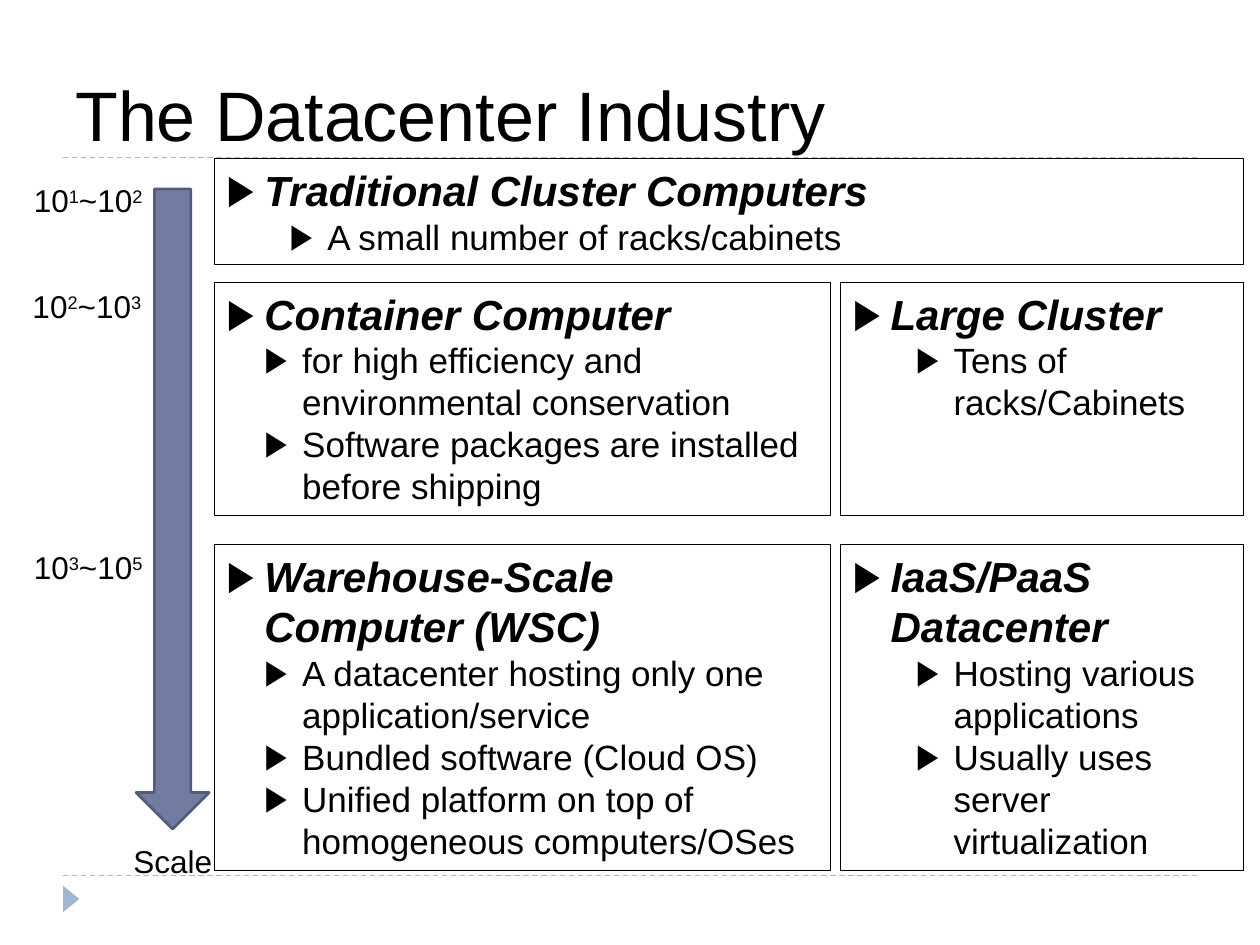
from dataclasses import dataclass

from lxml.etree import SubElement
from pptx import Presentation
from pptx.dml.color import RGBColor
from pptx.enum.dml import MSO_LINE_DASH_STYLE as Dash
from pptx.enum.shapes import MSO_CONNECTOR as Conn, MSO_SHAPE as Shape
from pptx.enum.text import MSO_ANCHOR as Anchor, PP_ALIGN as Align
from pptx.oxml.ns import qn
from pptx.util import Inches, Pt

WIDTH, HEIGHT = 10, 7.5
FONT, BLACK, PALE, SLATE, EDGE = "Arial", "000000", "9FB8CD", "727CA3", "545C79"
ROWS = ((1.26, 0.84), (2.24, 1.85), (4.32, 2.59))
COLS = ((1.7, 4.89), (6.67, 3.2))
HANG = 0.3


@dataclass(frozen=True)
class Panel:
    row: int
    first: int
    last: int
    heading: str
    points: tuple[str, ...]
    indent: float = 0.8


@dataclass(frozen=True)
class Scale:
    left: float
    top: float
    low: str
    high: str


PANELS = (
    Panel(2, 0, 0, "Warehouse-Scale Computer (WSC)",
          ("A datacenter hosting only one application/service",
           "Bundled software (Cloud OS)",
           "Unified platform on top of homogeneous computers/OSes"), 0.6),
    Panel(1, 0, 0, "Container Computer",
          ("for high efficiency and environmental conservation",
           "Software packages are installed before shipping"), 0.6),
    Panel(0, 0, 1, "Traditional Cluster Computers",
          ("A small number of racks/cabinets",)),
    Panel(1, 1, 1, "Large Cluster", ("Tens of racks/Cabinets",)),
    Panel(2, 1, 1, "IaaS/PaaS Datacenter",
          ("Hosting various applications", "Usually uses server virtualization")),
)
SCALES = (Scale(0.17, 1.39, "1", "2"), Scale(0.16, 2.23, "2", "3"),
          Scale(0.17, 4.3, "3", "5"))


def rgb(value: str) -> RGBColor:
    return RGBColor.from_string(value)


def add_text(p, text: str, *, size: float, bold=False, italic=False, raised=False) -> None:
    r = p.add_run()
    r.text = text
    r.font.name, r.font.size = FONT, Pt(size)
    r.font.bold, r.font.italic = bold, italic
    r.font.color.rgb = rgb(BLACK)
    if raised:
        r.font._element.set("baseline", "30000")


def add_box(s, left: float, top: float, width: float, height: float, wrap=False):
    sp = s.shapes.add_textbox(*map(Inches, (left, top, width, height)))
    sp.text_frame.word_wrap = wrap
    return sp.text_frame


def add_figure(s, kind, left: float, top: float, width: float, height: float, *,
               fill="", line="", weight=0.75):
    sp = s.shapes.add_shape(kind, *map(Inches, (left, top, width, height)))
    sp.shadow.inherit = False
    if fill:
        sp.fill.solid()
        sp.fill.fore_color.rgb = rgb(fill)
    else:
        sp.fill.background()
    if line:
        sp.line.color.rgb = rgb(line)
        sp.line.width = Pt(weight)
    else:
        sp.line.fill.background()
    return sp


def add_rule(s, y: float) -> None:
    margin = 0.05 * WIDTH
    c = s.shapes.add_connector(Conn.STRAIGHT, Inches(margin), Inches(y),
                               Inches(WIDTH - margin), Inches(y))
    c.line.color.rgb = rgb(PALE)
    c.line.width = Pt(0.75)
    c.line.dash_style = Dash.DASH
    SubElement(c._element.spPr, qn("a:effectLst"))


def set_bullet(p, indent: float, level: int) -> None:
    p.level = level
    p.alignment = Align.LEFT
    pPr = p._p.get_or_add_pPr()
    pPr.set("marL", str(Inches(indent)))
    pPr.set("indent", str(-Inches(HANG)))
    SubElement(pPr, qn("a:buFont")).set("typeface", FONT)
    SubElement(pPr, qn("a:buChar")).set("char", "▶")


def add_panel(s, panel: Panel) -> None:
    top, height = ROWS[panel.row]
    left = COLS[panel.first][0]
    width = sum(COLS[panel.last]) - left
    sp = add_figure(s, Shape.RECTANGLE, left, top, width, height, line=BLACK)
    tf = sp.text_frame
    tf.word_wrap = True
    tf.vertical_anchor = Anchor.TOP
    p = tf.paragraphs[0]
    set_bullet(p, HANG, 0)
    add_text(p, panel.heading, size=24, bold=True, italic=True)
    for point in panel.points:
        p = tf.add_paragraph()
        set_bullet(p, panel.indent, 1)
        add_text(p, point, size=20)


def add_scale(s, scale: Scale) -> None:
    p = add_box(s, scale.left, scale.top, 1.1, 0.4).paragraphs[0]
    for base, power in (("10", scale.low), ("~10", scale.high)):
        add_text(p, base, size=18)
        add_text(p, power, size=18, raised=True)


def main() -> None:
    prs = Presentation()
    prs.slide_width, prs.slide_height = Inches(WIDTH), Inches(HEIGHT)
    s = prs.slides.add_slide(prs.slide_layouts[6])

    for y in (6.95, 1.25):
        add_rule(s, y)
    marker = add_figure(s, Shape.ISOSCELES_TRIANGLE, 0.46, 7.07, 0.21, 0.13, fill=PALE)
    marker.rotation = 90

    tf = add_box(s, 0.05 * WIDTH, 0.33, 0.9 * WIDTH, 0.95, wrap=True)
    tf.vertical_anchor = Anchor.BOTTOM
    add_text(tf.paragraphs[0], "The Datacenter Industry", size=40)

    add_figure(s, Shape.DOWN_ARROW, 1.08, 1.5, 0.58, 5.08,
               fill=SLATE, line=EDGE, weight=1.5)
    add_text(add_box(s, 0.96, 6.63, 0.83, 0.4).paragraphs[0], "Scale", size=18)
    for scale in SCALES:
        add_scale(s, scale)
    for panel in PANELS:
        add_panel(s, panel)

    prs.save("out.pptx")


if __name__ == "__main__":
    main()
